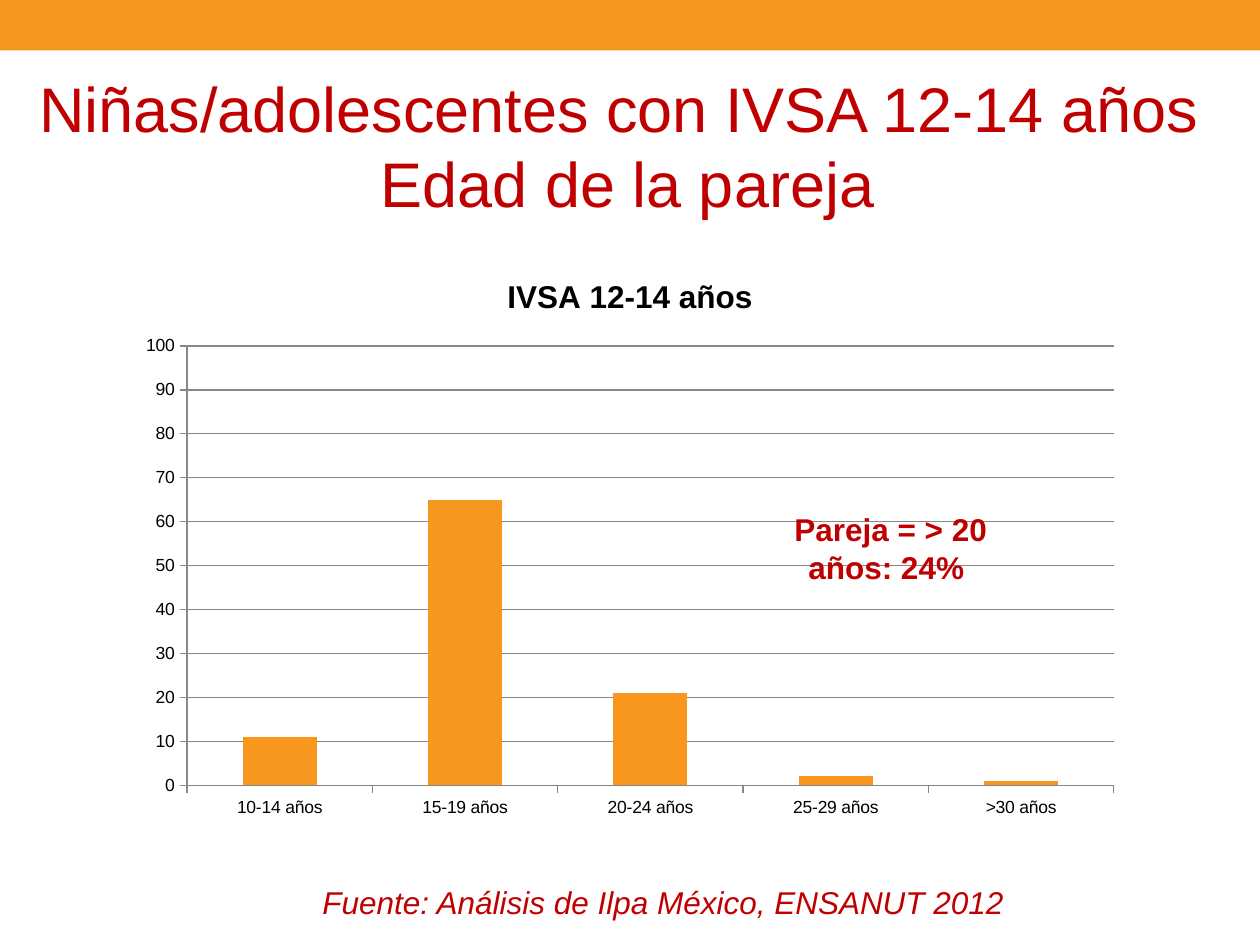
from dataclasses import dataclass

from pptx import Presentation
from pptx import util as u
from pptx.chart import data
from pptx.dml import color
from pptx.enum import chart as charts
from pptx.enum import shapes, text


@dataclass(frozen=True)
class Theme:
    """Colours, font and type sizes of the slide."""
    orange: str = "F8971D"
    red: str = "C00000"
    black: str = "000000"
    grey: str = "878787"
    font: str = "Arial"
    title: int = 36
    body: int = 18
    axis: int = 10


THEME = Theme()
CHART_TITLE = "IVSA 12-14 años"
PARTNER_AGES = {
    "10-14 años": 11,
    "15-19 años": 65,
    "20-24 años": 21,
    "25-29 años": 2,
    ">30 años": 1,
}


def box(left, top, width, height):
    """Return a position and size given in centimetres."""
    return [u.Cm(value) for value in (left, top, width, height)]


def format_font(font, size, colour, bold=False, italic=False):
    """Apply the theme font with the given size, colour and style."""
    font.name = THEME.font
    font.size = u.Pt(size)
    font.color.rgb = color.RGBColor.from_string(colour)
    font.bold = bold
    font.italic = italic


def paint(fill, colour):
    """Make a fill solid in the given colour."""
    fill.solid()
    fill.fore_color.rgb = color.RGBColor.from_string(colour)


def add_band(slide, place):
    """Add the orange band along the top edge."""
    shape = slide.shapes.add_shape(shapes.MSO_SHAPE.RECTANGLE, *place)
    shape.shadow.inherit = False
    paint(shape.fill, THEME.orange)
    shape.line.fill.background()


def add_text(slide, words, place, size=THEME.body, colour=THEME.red, **style):
    """Add centred text, one paragraph for each line of words."""
    frame = slide.shapes.add_textbox(*place).text_frame
    frame.word_wrap = False
    frame.text = words
    for paragraph in frame.paragraphs:
        paragraph.alignment = text.PP_ALIGN.CENTER
        format_font(paragraph.runs[0].font, size, colour, **style)


def format_line(line):
    """Draw a thin grey chart line."""
    line.width = u.Pt(0.75)
    line.color.rgb = color.RGBColor.from_string(THEME.grey)


def add_column_chart(slide, title, values, place):
    """Add the column chart of partner ages."""
    chart_data = data.CategoryChartData(number_format="0")
    chart_data.categories = list(values)
    chart_data.add_series(title, list(values.values()))
    chart = slide.shapes.add_chart(
        charts.XL_CHART_TYPE.COLUMN_CLUSTERED, *place, chart_data).chart
    format_font(chart.font, THEME.axis, THEME.black)
    chart.has_legend = False
    chart.has_title = True
    frame = chart.chart_title.text_frame
    frame.text = title
    format_font(frame.paragraphs[0].runs[0].font, THEME.body, THEME.black, bold=True)
    chart.chart_title.include_in_layout = False

    for axis in (chart.category_axis, chart.value_axis):
        axis.major_tick_mark = charts.XL_TICK_MARK.OUTSIDE
        axis.minor_tick_mark = charts.XL_TICK_MARK.NONE
        format_line(axis.format.line)
    axis = chart.value_axis
    axis.minimum_scale, axis.maximum_scale, axis.major_unit = 0, 100, 10
    axis.tick_labels.number_format = "0"
    axis.tick_labels.number_format_is_linked = False
    axis.has_major_gridlines = True
    format_line(axis.major_gridlines.format.line)

    plot = chart.plots[0]
    plot.gap_width = 150
    plot.vary_by_categories = False
    paint(plot.series[0].format.fill, THEME.orange)


def main():
    """Build and save the slide."""
    presentation = Presentation()
    presentation.slide_width, presentation.slide_height = u.Cm(25.4), u.Cm(19.05)
    slide = presentation.slides.add_slide(presentation.slide_layouts[6])
    add_band(slide, box(0, 0, 25.4, 1.02))
    add_text(slide, "Niñas/adolescentes con IVSA 12-14 años \nEdad de la pareja",
             box(0.36, 1.27, 24.58, 3.33), size=THEME.title)
    add_text(slide, "Fuente: Análisis de Ilpa México, ENSANUT 2012",
             box(6.14, 17.68, 14.46, 1.02), italic=True)
    add_column_chart(slide, CHART_TITLE, PARTNER_AGES, box(2.54, 5.08, 20.32, 11.63))
    add_text(slide, "Pareja = > 20 años: 24% ", box(15.34, 10.16, 5.23, 1.9), bold=True)
    presentation.save("out.pptx")


if __name__ == "__main__":
    main()
